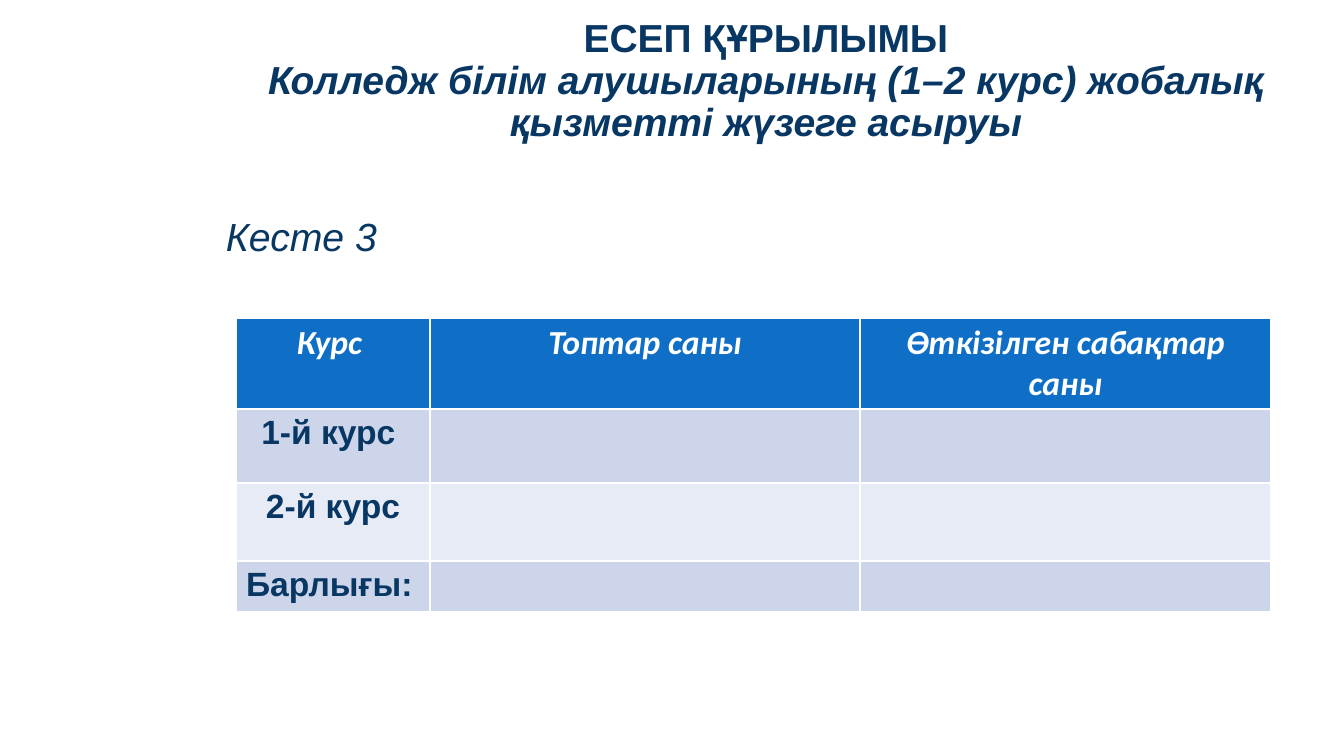
from pptx import Presentation
from pptx.dml.color import RGBColor
from pptx.enum.text import MSO_ANCHOR, MSO_AUTO_SIZE, PP_ALIGN
from pptx.util import Pt

PX = 9071  # EMU per px at 100.8 px to the inch
CENTER, LEFT = PP_ALIGN.CENTER, PP_ALIGN.LEFT
MIDDLE, NO_AUTOFIT = MSO_ANCHOR.MIDDLE, MSO_AUTO_SIZE.NONE

NAVY = RGBColor(0x08, 0x37, 0x63)
WHITE = RGBColor(0xFF, 0xFF, 0xFF)
HEADER_BLUE = RGBColor(0x0F, 0x6F, 0xC6)
BAND_DARK = RGBColor(0xCC, 0xD5, 0xEA)
BAND_LIGHT = RGBColor(0xE7, 0xEB, 0xF5)

COLUMN_WIDTHS = [194, 430, 411]
ROW_HEIGHTS = [91, 74, 78, 51]
ROW_FILLS = [HEADER_BLUE, BAND_DARK, BAND_LIGHT, BAND_DARK]
ROWS = [
    ["Курс ", "Топтар саны", "Өткізілген сабақтар саны"],
    ["1-й курс ", "", ""],
    ["2-й курс", "", ""],
    ["Барлығы:", "", ""],
]


def px(*lengths):
    return [length * PX for length in lengths]


def style(font, size, color=NAVY, name="Arial", bold=False, italic=False):
    values = {"size": Pt(size), "name": name, "bold": bold, "italic": italic}
    for attribute, value in values.items():
        setattr(font, attribute, value)
    font.color.rgb = color


prs = Presentation()
prs.slide_width, prs.slide_height = px(1344, 756)
slide = prs.slides.add_slide(prs.slide_layouts[5])

# Title
title = slide.shapes.title
title.left, title.top, title.width, title.height = px(248, 30, 1036, 146)
title_frame = title.text_frame
title_frame.word_wrap = True
title_frame.auto_size = NO_AUTOFIT
title_frame.vertical_anchor = MIDDLE
title_frame.margin_bottom = 47 * PX
heading = title_frame.paragraphs[0]
heading.alignment = CENTER
heading.line_spacing = 0.9
report = heading.add_run()
report.text = "ЕСЕП ҚҰРЫЛЫМЫ"
style(report.font, 27.9, bold=True)
heading.add_line_break()
subject = heading.add_run()
subject.text = "Колледж білім алушыларының (1–2 курс) жобалық қызметті жүзеге асыруы"
style(subject.font, 27.9, bold=True, italic=True)

# Table caption
caption_frame = slide.shapes.add_textbox(*px(216, 213, 1036, 480)).text_frame
caption_frame.word_wrap = True
caption = caption_frame.paragraphs[0]
caption.line_spacing = 0.9
caption_run = caption.add_run()
caption_run.text = "Кесте 3"
style(caption_run.font, 28, italic=True)

# Course table
table = slide.shapes.add_table(
    len(ROWS), len(COLUMN_WIDTHS),
    *px(236, 318, sum(COLUMN_WIDTHS), sum(ROW_HEIGHTS))).table
for column, width in zip(table.columns, COLUMN_WIDTHS):
    column.width = width * PX
for r, (row, height) in enumerate(zip(table.rows, ROW_HEIGHTS)):
    row.height = height * PX
    for cell, text in zip(row.cells, ROWS[r]):
        cell.fill.solid()
        cell.fill.fore_color.rgb = ROW_FILLS[r]
        if not text:
            continue
        entry = cell.text_frame.paragraphs[0]
        entry.alignment = LEFT if r == len(ROWS) - 1 else CENTER
        entry_run = entry.add_run()
        entry_run.text = text
        if r == 0:
            style(entry_run.font, 24, WHITE, "Calibri", bold=True, italic=True)
        else:
            style(entry_run.font, 24, bold=True)

prs.save("out.pptx")
